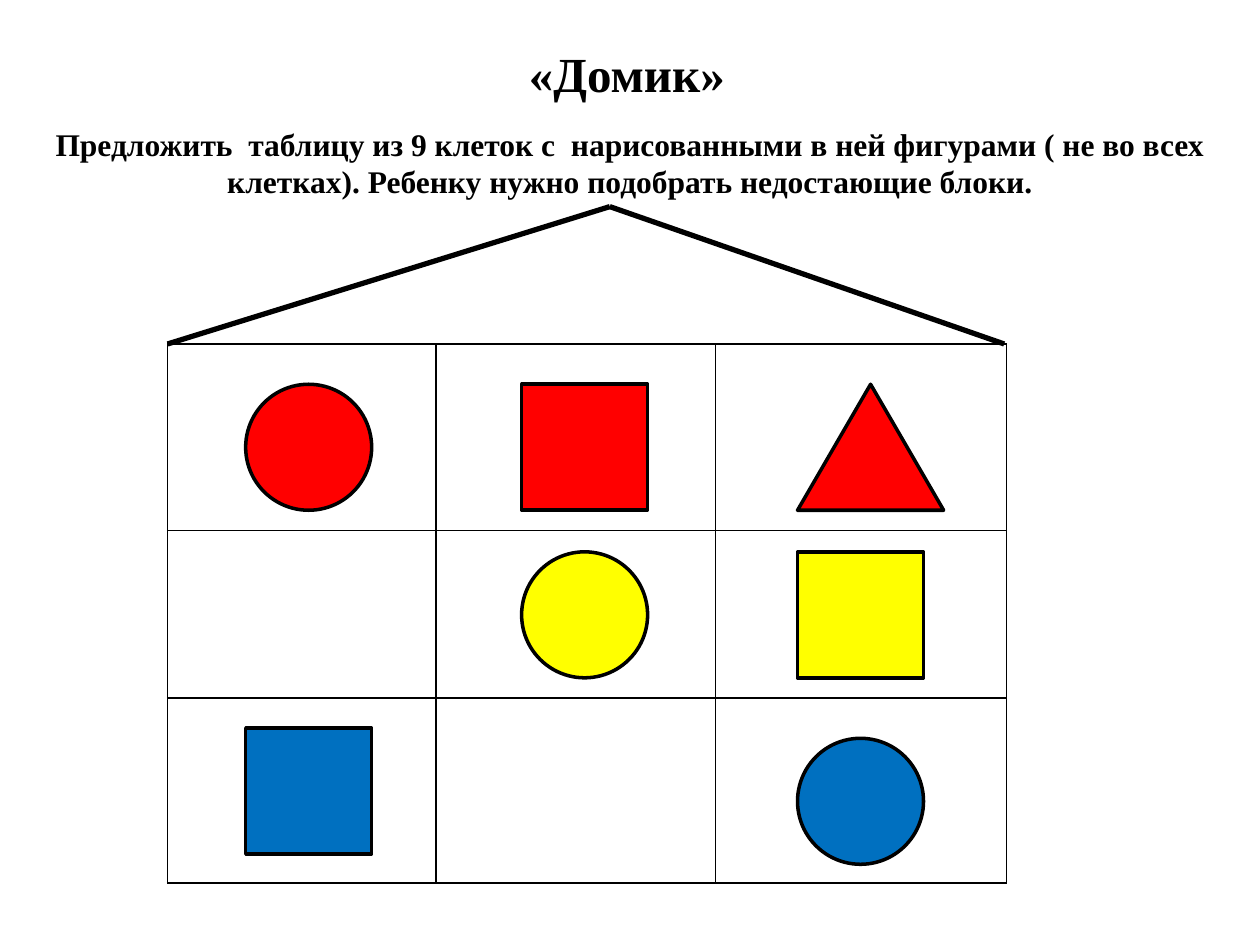
from lxml import etree
from pptx import Presentation
from pptx.dml.color import RGBColor
from pptx.enum.shapes import MSO_CONNECTOR, MSO_SHAPE as Shape
from pptx.enum.text import MSO_ANCHOR as Anchor, PP_ALIGN
from pptx.oxml import parse_xml
from pptx.oxml.ns import nsdecls, qn
from pptx.util import Inches, Pt

BLACK = RGBColor(0x00, 0x00, 0x00)
RED = RGBColor(0xFF, 0x00, 0x00)
YELLOW = RGBColor(0xFF, 0xFF, 0x00)
BLUE = RGBColor(0x00, 0x70, 0xC0)
FONT = "Times New Roman"

# House grid, in inches
HOUSE_LEFT, HOUSE_TOP = 1.33, 2.73
COLUMN_WIDTHS = (2.13, 2.22, 2.31)
ROW_HEIGHTS = (1.48, 1.33, 1.47)
ROOF_PEAK = (4.84, 1.64)
ROOF_RIGHT = 7.97

# Figures inside the grid
FIGURE_SIZE = 1
FIGURE_LEFT, FIGURE_STEP = 1.95, 2.19
FIGURE_TOPS = (3.05, 4.38, 5.78)
# shape, colour, column, row, width, downward shift
FIGURES = (
    (Shape.OVAL, RED, 0, 0, FIGURE_SIZE, 0),
    (Shape.RECTANGLE, RED, 1, 0, FIGURE_SIZE, 0),
    (Shape.ISOSCELES_TRIANGLE, RED, 2, 0, 1.16, 0),
    (Shape.OVAL, YELLOW, 1, 1, FIGURE_SIZE, 0),
    (Shape.RECTANGLE, YELLOW, 2, 1, FIGURE_SIZE, 0),
    (Shape.RECTANGLE, BLUE, 0, 2, FIGURE_SIZE, 0),
    (Shape.OVAL, BLUE, 2, 2, FIGURE_SIZE, 0.08),
)

TITLE = "«Домик»"
TASK = ("Предложить  таблицу из 9 клеток с  нарисованными в ней фигурами "
        "( не во всех клетках). Ребенку нужно подобрать недостающие блоки.")


def add_text(slide, text, box, size, anchor):
    frame = slide.shapes.add_textbox(*map(Inches, box)).text_frame
    frame.word_wrap = True
    frame.vertical_anchor = anchor
    paragraph = frame.paragraphs[0]
    paragraph.text = text
    paragraph.alignment = PP_ALIGN.CENTER
    font = paragraph.font
    font.name, font.size, font.bold = FONT, Pt(size), True
    font.color.rgb = BLACK


def set_borders(cell):
    properties = cell._tc.get_or_add_tcPr()
    for index, side in enumerate("LRTB"):
        properties.insert(index, parse_xml(
            f'<a:ln{side} {nsdecls("a")} w="{Pt(1)}"><a:solidFill>'
            f'<a:srgbClr val="{BLACK}"/></a:solidFill></a:ln{side}>'))


def add_house_grid(slide):
    frame = slide.shapes.add_table(
        len(ROW_HEIGHTS), len(COLUMN_WIDTHS), Inches(HOUSE_LEFT), Inches(HOUSE_TOP),
        Inches(sum(COLUMN_WIDTHS)), Inches(sum(ROW_HEIGHTS)))
    table = frame.table
    table.first_row = table.horz_banding = False
    for column, width in zip(table.columns, COLUMN_WIDTHS):
        column.width = Inches(width)
    for row, height in zip(table.rows, ROW_HEIGHTS):
        row.height = Inches(height)
    for cell in table.iter_cells():
        cell.fill.background()
        set_borders(cell)


def add_roof_slope(slide, start, end):
    slope = slide.shapes.add_connector(
        MSO_CONNECTOR.STRAIGHT, *map(Inches, (*start, *end)))
    slope.line.color.rgb = BLACK
    slope.line.width = Pt(3)
    etree.SubElement(slope._element.spPr, qn("a:effectLst"))


def add_figure(slide, kind, colour, column, row, width, shift):
    figure = slide.shapes.add_shape(
        kind, Inches(FIGURE_LEFT + column * FIGURE_STEP),
        Inches(FIGURE_TOPS[row] + shift), Inches(width), Inches(FIGURE_SIZE))
    figure.shadow.inherit = False
    figure.fill.solid()
    figure.fill.fore_color.rgb = colour
    figure.line.color.rgb = BLACK
    figure.line.width = Pt(2)


def main():
    presentation = Presentation()
    presentation.slide_width, presentation.slide_height = Inches(10), Inches(7.5)
    slide = presentation.slides.add_slide(presentation.slide_layouts[6])

    # Heading and task
    add_text(slide, TITLE, (0.5, 0.23, 8.95, 0.7), 28, Anchor.MIDDLE)
    add_text(slide, TASK, (0, 0.94, 10, 0.71), 18, Anchor.TOP)

    # House: walls and roof
    add_house_grid(slide)
    add_roof_slope(slide, (HOUSE_LEFT, HOUSE_TOP), ROOF_PEAK)
    add_roof_slope(slide, ROOF_PEAK, (ROOF_RIGHT, HOUSE_TOP))

    # Figures in the rooms
    for figure in FIGURES:
        add_figure(slide, *figure)

    presentation.save("out.pptx")


if __name__ == "__main__":
    main()
